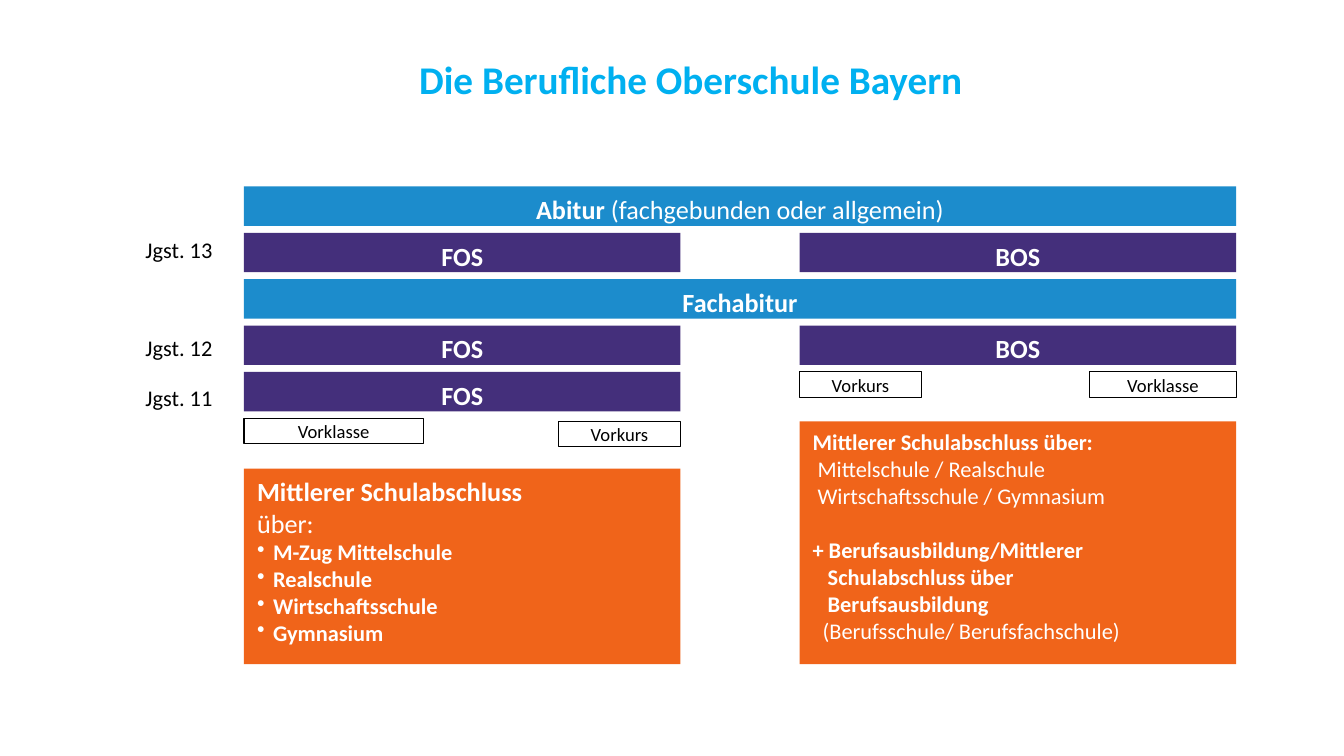
from dataclasses import dataclass

from lxml.etree import SubElement
from pptx import Presentation
from pptx.dml.color import RGBColor
from pptx.enum.shapes import MSO_SHAPE
from pptx.enum.text import MSO_ANCHOR, MSO_AUTO_SIZE, PP_ALIGN
from pptx.oxml.ns import qn
from pptx.util import Inches, Pt


@dataclass(frozen=True)
class Theme:
    font: str = "Calibri"
    title: str = "00B0F0"
    degree: str = "1C8CCC"
    school: str = "442F7B"
    entry: str = "F0641A"
    white: str = "FFFFFF"
    black: str = "000000"
    head: float = 28
    large: float = 18.7
    body: float = 16
    small: float = 13.3


@dataclass(frozen=True)
class Line:
    text: str
    size: float
    bold: bool = False
    indent: float = 0
    before: float = 0
    bullet: bool = False


THEME = Theme()
LEFT, RIGHT, WIDTH = 2.42, 7.93, 4.33
FULL = RIGHT + WIDTH - LEFT
TOP, PITCH, BAR = 1.85, 0.46, 0.39
BOTTOM = 6.59


def style(run, size, color, bold=False):
    font = run.font
    font.name, font.size, font.bold = THEME.font, Pt(size), bold
    font.color.rgb = RGBColor.from_string(color)


def add_box(slide, box, fill, edge=None):
    """Add a plain rectangle and return its text frame."""
    shape = slide.shapes.add_shape(MSO_SHAPE.RECTANGLE, *map(Inches, box))
    shape.shadow.inherit = False
    shape.fill.solid()
    shape.fill.fore_color.rgb = RGBColor.from_string(fill)
    if edge:
        shape.line.color.rgb = RGBColor.from_string(edge)
        shape.line.width = Pt(0.75)
    else:
        shape.line.fill.background()
    frame = shape.text_frame
    frame.word_wrap = True
    frame.vertical_anchor = MSO_ANCHOR.TOP
    frame.margin_left = frame.margin_right = Inches(0.13)
    frame.margin_top = frame.margin_bottom = Inches(0.07)
    return frame


def add_label(frame, text, size, color, bold=False):
    frame.text = text
    para = frame.paragraphs[0]
    para.alignment = PP_ALIGN.CENTER
    style(para.runs[0], size, color, bold)
    return para


def add_title(slide, box, text):
    frame = slide.shapes.add_textbox(*map(Inches, box)).text_frame
    frame.word_wrap = False
    frame.auto_size = MSO_AUTO_SIZE.SHAPE_TO_FIT_TEXT
    frame.text = text
    style(frame.paragraphs[0].runs[0], THEME.head, THEME.title, True)


def add_bar(slide, box, text, fill, extra=""):
    """Add a coloured bar with a bold label and an optional plain ending."""
    frame = add_box(slide, box, fill)
    para = add_label(frame, text, THEME.large, THEME.white, True)
    if extra:
        run = para.add_run()
        run.text = extra
        style(run, THEME.large, THEME.white)


def add_grade(slide, box, text):
    add_label(add_box(slide, box, THEME.white), text, THEME.body, THEME.black)


def add_course(slide, box, text):
    frame = add_box(slide, box, THEME.white, THEME.black)
    frame.vertical_anchor = MSO_ANCHOR.MIDDLE
    add_label(frame, text, THEME.small, THEME.black)


def add_entry(slide, box, lines):
    """Add an orange panel that lists the ways into the school."""
    frame = add_box(slide, box, THEME.entry)
    frame.text = "\n".join(line.text for line in lines)
    for para, line in zip(frame.paragraphs, lines):
        para.alignment = PP_ALIGN.LEFT
        para.space_before = Pt(line.before)
        style(para.runs[0], line.size, THEME.white, line.bold)
        props = para._p.get_or_add_pPr()
        props.set("marL", str(Inches(line.indent)))
        props.set("indent", str(Inches(-line.indent if line.bullet else 0)))
        if line.bullet:
            SubElement(props, qn("a:buChar")).set("char", "•")


def add_chart(slide):
    """Stack the school years and degrees on a common row pitch."""
    rows = [TOP + PITCH * i for i in range(6)]
    for y, text in ((2.27, "Jgst. 13"), (3.24, "Jgst. 12"), (3.74, "Jgst. 11")):
        add_grade(slide, (1.19, y, 1.17, 0.37), text)
    for x, row, text in (
        (LEFT, 1, "FOS"), (RIGHT, 1, "BOS"),
        (LEFT, 3, "FOS"), (RIGHT, 3, "BOS"), (LEFT, 4, "FOS"),
    ):
        add_bar(slide, (x, rows[row], WIDTH, BAR), text, THEME.school)
    for row, text, extra in (
        (0, "Abitur ", "(fachgebunden oder allgemein)"), (2, "Fachabitur", ""),
    ):
        add_bar(slide, (LEFT, rows[row], FULL, BAR), text, THEME.degree, extra)
    for x, y, wide, text in (
        (LEFT + WIDTH - 1.21, rows[5] + 0.03, 1.21, "Vorkurs"),
        (RIGHT, rows[4], 1.21, "Vorkurs"),
        (RIGHT + WIDTH - 1.45, rows[4], 1.45, "Vorklasse"),
        (LEFT, rows[5], 1.78, "Vorklasse"),
    ):
        add_course(slide, (x, y, wide, 0.25), text)


def add_paths(slide):
    """Place both entry panels on the same bottom edge."""
    big, mid = THEME.large, THEME.body
    schools = ("M-Zug Mittelschule", "Realschule", "Wirtschaftsschule", "Gymnasium")
    fos = [Line("Mittlerer Schulabschluss", big, True), Line("über:", big)]
    fos += [Line(name, mid, True, 0.16, bullet=True) for name in schools]
    bos = [
        Line("Mittlerer Schulabschluss über:", mid, True),
        Line("Mittelschule / Realschule", mid, indent=0.05),
        Line("Wirtschaftsschule / Gymnasium", mid, indent=0.05),
        Line("+ Berufsausbildung/Mittlerer", mid, True, before=19.5),
        Line("Schulabschluss über", mid, True, 0.15),
        Line("Berufsausbildung", mid, True, 0.15),
        Line("(Berufsschule/ Berufsfachschule)", mid, indent=0.1),
    ]
    for x, y, lines in ((LEFT, 4.65, fos), (RIGHT, 4.18, bos)):
        add_entry(slide, (x, y, WIDTH, BOTTOM - y), lines)


def main():
    deck = Presentation()
    deck.slide_width, deck.slide_height = Inches(13.33), Inches(7.5)
    slide = deck.slides.add_slide(deck.slide_layouts[6])
    add_title(slide, (4.06, 0.5, 5.66, 0.57), "Die Berufliche Oberschule Bayern")
    add_chart(slide)
    add_paths(slide)
    deck.save("out.pptx")


if __name__ == "__main__":
    main()
